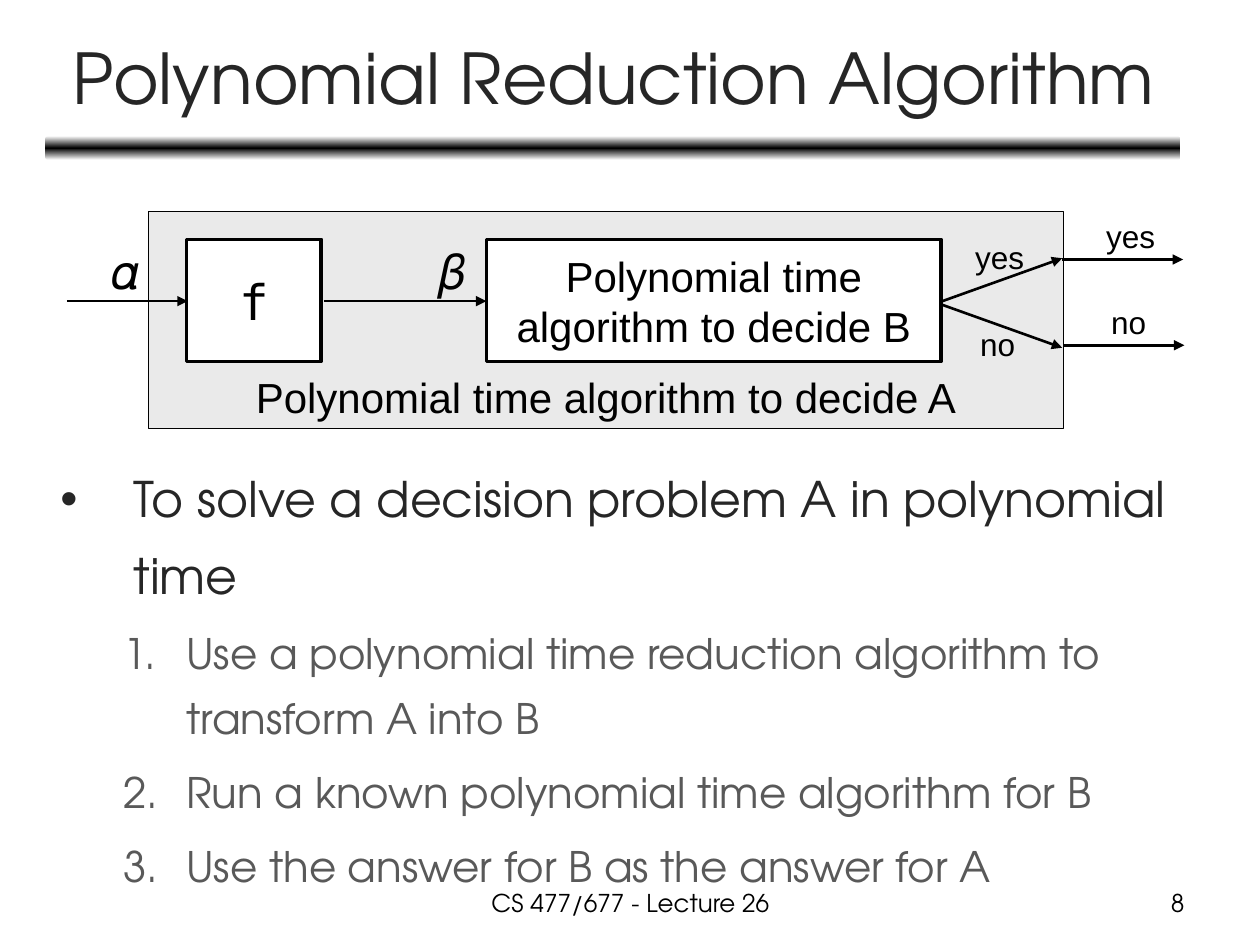
from copy import deepcopy

from pptx import Presentation
from pptx.dml.color import RGBColor
from pptx.enum.shapes import MSO_CONNECTOR, MSO_SHAPE
from pptx.enum.text import MSO_ANCHOR, MSO_AUTO_SIZE, PP_ALIGN
from pptx.oxml.ns import qn
from pptx.oxml.xmlchemy import OxmlElement
from pptx.util import Inches, Pt


def color(hex_value):
    return RGBColor.from_string(hex_value)


def add_child(parent, tag, **attrs):
    child = OxmlElement(tag)
    for name, value in attrs.items():
        child.set(name, value)
    parent.append(child)
    return child


class SlideBuilder:
    """Holds the style and the current slide, and adds each kind of element."""

    heading = "TeX Gyre Adventor"
    label = "Arial"
    black = "000000"

    def __init__(self, slide):
        self.s = slide

    def place(self, sp, box):
        for name, value in zip(("left", "top", "width", "height"), box):
            setattr(sp, name, Inches(value))

    def styled_run(self, p, text, size, font, hex_value):
        r = p.add_run()
        r.text = text
        for name, value in {"size": Pt(size), "name": font}.items():
            setattr(r.font, name, value)
        r.font.color.rgb = color(hex_value)

    def format_frame(self, tf, **formats):
        for name, value in formats.items():
            setattr(tf, name, value)

    def title(self, box, text):
        sp = self.s.shapes.title
        self.place(sp, box)
        self.format_frame(sp.text_frame, auto_size=MSO_AUTO_SIZE.NONE,
                          vertical_anchor=MSO_ANCHOR.MIDDLE)
        self.styled_run(sp.text_frame.paragraphs[0], text, 40, self.heading, "262626")

    def body(self, box, lead, steps):
        sp = self.s.placeholders[1]
        self.place(sp, box)
        tf = sp.text_frame
        tf.auto_size = MSO_AUTO_SIZE.NONE
        self.list_item(tf.paragraphs[0], lead, 28, "262626", 0.58, 0.58)
        for step in steps:
            p = tf.add_paragraph()
            p.level = 1
            self.list_item(p, step, 24, "595959", 1, 0.5)
            pPr = p._p.get_or_add_pPr()
            add_child(pPr, "a:buFont", typeface=self.heading)
            add_child(pPr, "a:buAutoNum", type="arabicPeriod")

    def list_item(self, p, text, size, hex_value, margin, hanging):
        p.line_spacing = 1.3
        pPr = p._p.get_or_add_pPr()
        pPr.set("marL", str(Inches(margin)))
        pPr.set("indent", str(-Inches(hanging)))
        self.styled_run(p, text, size, self.heading, hex_value)

    def rule(self, box):
        sp = self.s.shapes.add_shape(MSO_SHAPE.ROUNDED_RECTANGLE, *map(Inches, box))
        sp.shadow.inherit = False
        sp.line.fill.background()
        sp.fill.gradient()
        sp.fill.gradient_angle = 90
        stops = sp._element.spPr.find(qn("a:gradFill")).find(qn("a:gsLst"))
        stops.append(deepcopy(stops[-1]))
        for stop, position, value in zip(sp.fill.gradient_stops, (0, 0.5, 1),
                                         ("FFFFFF", self.black, "FFFFFF")):
            stop.position = position
            stop.color.rgb = color(value)

    def block(self, box, lines, fill="FFFFFF", width=2, size=24, font=label,
              anchor=MSO_ANCHOR.MIDDLE):
        sp = self.s.shapes.add_shape(MSO_SHAPE.RECTANGLE, *map(Inches, box))
        sp.shadow.inherit = False
        sp.fill.solid()
        sp.fill.fore_color.rgb = color(fill)
        sp.line.color.rgb = color(self.black)
        sp.line.width = Pt(width)
        tf = sp.text_frame
        self.format_frame(tf, word_wrap=False, vertical_anchor=anchor)
        for i, line in enumerate(lines):
            p = tf.add_paragraph() if i else tf.paragraphs[0]
            p.alignment = PP_ALIGN.CENTER
            self.styled_run(p, line, size, font, self.black)

    def text(self, box, text, size, font=label, align=PP_ALIGN.LEFT, wrap=False):
        sp = self.s.shapes.add_textbox(*map(Inches, box))
        self.format_frame(sp.text_frame, word_wrap=wrap, auto_size=MSO_AUTO_SIZE.NONE)
        p = sp.text_frame.paragraphs[0]
        p.alignment = align
        self.styled_run(p, text, size, font, self.black)

    def arrow(self, x1, y1, x2, y2):
        cxn = self.s.shapes.add_connector(MSO_CONNECTOR.STRAIGHT,
                                          *map(Inches, (x1, y1, x2, y2)))
        cxn.line.color.rgb = color(self.black)
        cxn.line.width = Pt(1.5)
        spPr = cxn._element.spPr
        add_child(spPr.get_or_add_ln(), "a:tailEnd", type="triangle")
        add_child(spPr, "a:effectLst")


def main():
    prs = Presentation()
    prs.slide_width, prs.slide_height = Inches(10), Inches(7.5)
    b = SlideBuilder(prs.slides.add_slide(prs.slide_layouts[1]))

    b.rule((0.36, 1.08, 9.01, 0.19))
    b.title((0.37, 0.11, 9, 0.99), "Polynomial Reduction Algorithm")
    b.body((0.38, 3.53, 9.29, 3.35),
           "To solve a decision problem A in polynomial time",
           ["Use a polynomial time reduction algorithm to transform A into B",
            "Run a known polynomial time algorithm for B",
            "Use the answer for B as the answer for A"])

    b.block((1.18, 1.68, 7.26, 1.72), ["Polynomial time algorithm to decide A"],
            fill="EAEAEA", width=0.75, anchor=MSO_ANCHOR.BOTTOM)
    b.block((1.48, 1.9, 1.07, 0.97), ["f"], size=28, font="DejaVu Sans Mono")
    b.block((3.86, 1.9, 3.61, 0.97), ["Polynomial time", "algorithm to decide B"])

    for ends in ((0.53, 2.39, 1.49, 2.39), (2.57, 2.39, 3.86, 2.39),
                 (7.48, 2.39, 8.43, 2.05), (7.48, 2.42, 8.43, 2.76),
                 (8.43, 2.06, 9.39, 2.06), (8.44, 2.74, 9.4, 2.74)):
        b.arrow(*ends)

    for left, symbol in ((0.79, "𝛼"), (3.38, "𝛽")):
        b.text((left, 1.86, 0.45, 0.57), symbol, 28)
    for left, top in ((7.64, 1.84), (8.68, 1.67)):
        b.text((left, top, 0.59, 0.4), "yes", 18)
        b.text((left + 0.04, top + 0.69, 0.48, 0.4), "no", 18)

    b.text((3.42, 7, 3.17, 0.35), "CS 477/677 - Lecture 26", 14, b.heading,
           PP_ALIGN.CENTER, True)
    b.text((7.17, 7, 2.33, 0.35), "8", 14, b.heading, PP_ALIGN.RIGHT, True)
    prs.save("out.pptx")


if __name__ == "__main__":
    main()
